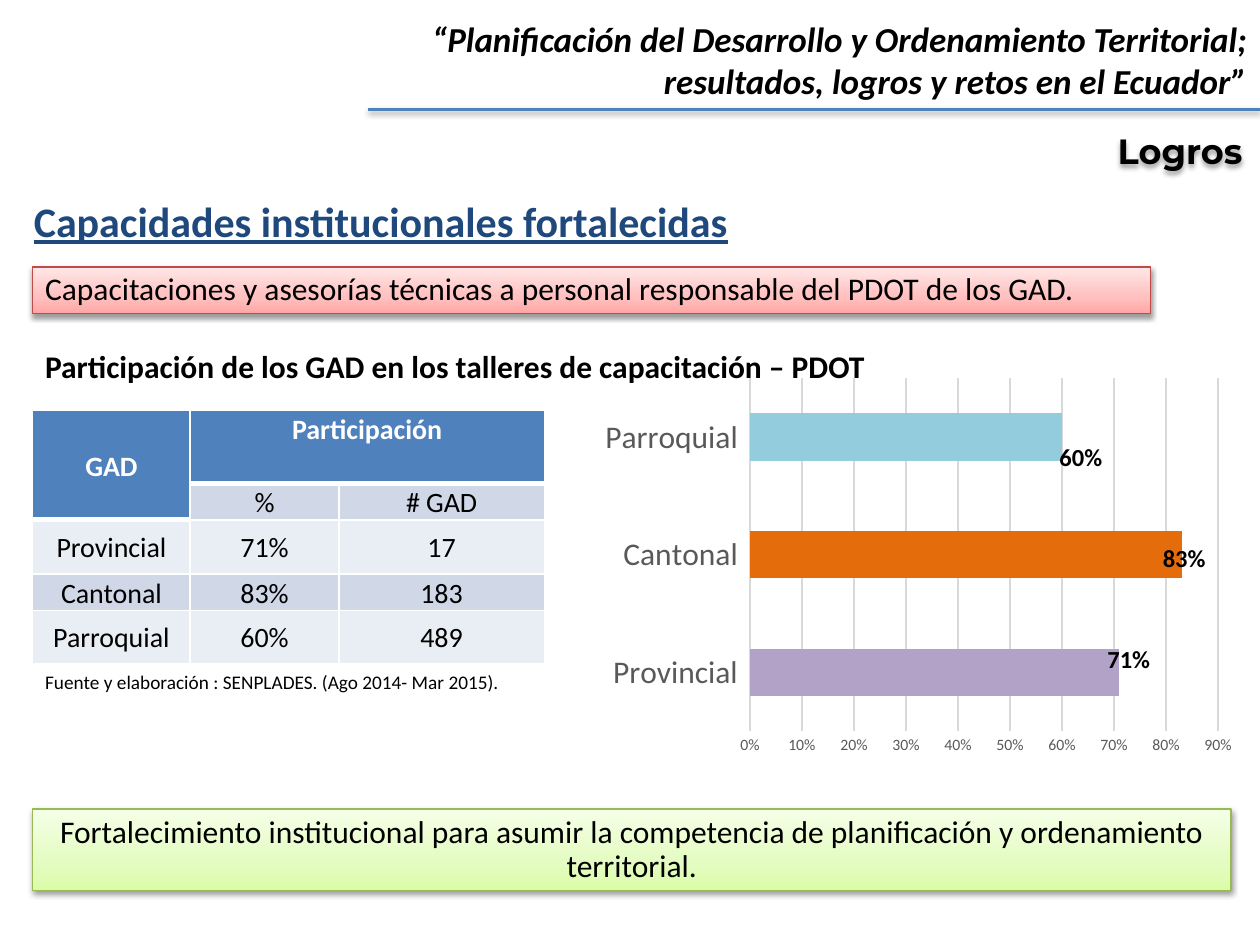
"""Builds the slide on training achievements in local planning."""
from copy import deepcopy

from lxml import etree
from pptx import Presentation
from pptx.chart.data import CategoryChartData
from pptx.dml.color import RGBColor
from pptx.enum.chart import XL_CHART_TYPE, XL_TICK_MARK
from pptx.enum.shapes import MSO_CONNECTOR, MSO_SHAPE
from pptx.enum.text import MSO_ANCHOR, MSO_AUTO_SIZE, PP_ALIGN
from pptx.oxml import parse_xml
from pptx.oxml.ns import nsdecls, qn
from pptx.util import Inches, Pt

LEFT, CENTER, RIGHT, JUSTIFY = PP_ALIGN.LEFT, PP_ALIGN.CENTER, PP_ALIGN.RIGHT, PP_ALIGN.JUSTIFY
TOP, MIDDLE = MSO_ANCHOR.TOP, MSO_ANCHOR.MIDDLE
FIT_SHAPE = MSO_AUTO_SIZE.SHAPE_TO_FIT_TEXT
RECTANGLE, ROUNDED = MSO_SHAPE.RECTANGLE, MSO_SHAPE.ROUNDED_RECTANGLE
STRAIGHT = MSO_CONNECTOR.STRAIGHT
BAR_CLUSTERED = XL_CHART_TYPE.BAR_CLUSTERED
NO_TICK = XL_TICK_MARK.NONE

BLACK = RGBColor(0x00, 0x00, 0x00)
WHITE = RGBColor(0xFF, 0xFF, 0xFF)
BLUE = RGBColor(0x4F, 0x81, 0xBD)
NAVY = RGBColor(0x1F, 0x49, 0x7D)
BAND_DARK = RGBColor(0xD0, 0xD8, 0xE8)
BAND_LIGHT = RGBColor(0xE9, 0xED, 0xF4)
AXIS_TEXT = RGBColor(0x59, 0x59, 0x59)
GRID = RGBColor(0xD9, 0xD9, 0xD9)
RED_LINE = RGBColor(0xBF, 0x4C, 0x48)
RED_STOPS = (RGBColor(0xFF, 0xA6, 0xA5), RGBColor(0xFF, 0xC0, 0xBF), RGBColor(0xFF, 0xE7, 0xE7))
GREEN_LINE = RGBColor(0x98, 0xB9, 0x55)
GREEN_STOPS = (RGBColor(0xDA, 0xFD, 0xA7), RGBColor(0xE4, 0xFC, 0xC2), RGBColor(0xF5, 0xFF, 0xE7))
BAR_COLORS = (RGBColor(0xB3, 0xA2, 0xC7), RGBColor(0xE4, 0x6C, 0x0A), RGBColor(0x93, 0xCD, 0xDD))

STOP_POSITIONS = (0, 0.35, 1)
COLUMN_WIDTHS = (1.25, 1.18, 1.63)
ROW_HEIGHTS = (0.58, 0.28, 0.43, 0.29, 0.42)
TABLE_ROWS = (
    ("GAD", "Participación", ""),
    ("", "%", "# GAD"),
    ("Provincial", "71%", "17"),
    ("Cantonal", "83%", "183"),
    ("Parroquial", "60%", "489"),
)
SHADOW = (
    f'<a:effectLst {nsdecls("a")}><a:outerShdw blurRad="40000" dist="20000" dir="5400000" '
    'rotWithShape="0"><a:srgbClr val="000000"><a:alpha val="38000"/></a:srgbClr>'
    '</a:outerShdw></a:effectLst>'
)


def style_font(font, size, color=BLACK, bold=False, name="Calibri"):
    """Set the typeface, size, colour and weight of a font."""
    font.name = name
    font.size = Pt(size)
    font.bold = bold
    font.color.rgb = color


def write_text(text_frame, text, size, alignment, spacing=None, **font_options):
    """Fill a text frame and format each of its paragraphs."""
    text_frame.text = text
    for paragraph in text_frame.paragraphs:
        paragraph.alignment = alignment
        if spacing:
            paragraph.line_spacing = spacing
        for run in paragraph.runs:
            style_font(run.font, size, **font_options)


def add_text(slide, box, text, size, alignment, spacing=None, wrap=True, **font_options):
    """Add a text box and return its text frame."""
    text_frame = slide.shapes.add_textbox(*map(Inches, box)).text_frame
    text_frame.word_wrap = wrap
    text_frame.auto_size = FIT_SHAPE
    write_text(text_frame, text, size, alignment, spacing, **font_options)
    return text_frame


def add_shadow(shape):
    """Give a shape or connector a soft shadow below it."""
    shape._element.spPr.append(parse_xml(SHADOW))


def add_banner(slide, box, text, alignment, stop_colors, line_color):
    """Add a shaded rectangle with a vertical three-stop gradient."""
    shape = slide.shapes.add_shape(RECTANGLE, *map(Inches, box))
    shape.fill.gradient()
    shape.fill.gradient_angle = 90
    stop_list = shape._element.spPr.find(".//" + qn("a:gsLst"))
    stop_list.insert(1, deepcopy(stop_list[0]))
    for stop, position, color in zip(shape.fill.gradient_stops, STOP_POSITIONS, stop_colors):
        stop.position = position
        stop.color.rgb = color
    shape.line.color.rgb = line_color
    shape.line.width = Pt(0.75)
    add_shadow(shape)
    shape.text_frame.word_wrap = True
    write_text(shape.text_frame, text, 18, alignment, 0.9)


def add_section_label(slide):
    """Add the section name at the top right."""
    shape = slide.shapes.add_shape(ROUNDED, *map(Inches, (8.31, 0.89, 2.19, 0.61)))
    shape.fill.background()
    shape.line.fill.background()
    add_shadow(shape)
    shape.text_frame.vertical_anchor = MIDDLE
    write_text(shape.text_frame, "Logros ", 20, CENTER, bold=True, name="Montserrat")


def add_header_rule(slide):
    """Add the line under the presentation title."""
    rule = slide.shapes.add_connector(STRAIGHT, *map(Inches, (2.92, 0.87, 10, 0.87)))
    rule.line.color.rgb = BLUE
    rule.line.width = Pt(2)
    add_shadow(rule)


def add_cell_borders(cell, bottom_width):
    """Draw white borders around a table cell."""
    properties = cell._tc.get_or_add_tcPr()
    for side, width in (("lnL", 1), ("lnR", 1), ("lnT", 1), ("lnB", bottom_width)):
        line = etree.SubElement(properties, qn(f"a:{side}"), w=str(Pt(width)))
        fill = etree.SubElement(line, qn("a:solidFill"))
        etree.SubElement(fill, qn("a:srgbClr"), val=str(WHITE))


def add_participation_table(slide):
    """Add the table of participation by level of government."""
    frame = slide.shapes.add_table(
        len(ROW_HEIGHTS), len(COLUMN_WIDTHS), *map(Inches, (0.26, 3.26, 4.06, 2)))
    table = frame.table
    for column, width in zip(table.columns, COLUMN_WIDTHS):
        column.width = Inches(width)
    for row, height in zip(table.rows, ROW_HEIGHTS):
        row.height = Inches(height)
    for i, values in enumerate(TABLE_ROWS):
        for j, value in enumerate(values):
            cell = table.cell(i, j)
            is_header = i == 0 or (i == 1 and j == 0)
            add_cell_borders(cell, 3 if is_header else 1)
            cell.fill.solid()
            cell.fill.fore_color.rgb = BLUE if is_header else (BAND_LIGHT, BAND_DARK)[i % 2]
            cell.margin_left = cell.margin_right = Inches(0.09)
            cell.margin_top = cell.margin_bottom = 0
            cell.vertical_anchor = TOP if i == 0 and j > 0 else MIDDLE
            write_text(cell.text_frame, value, 16, CENTER, 1.07,
                       color=WHITE if is_header else BLACK, bold=is_header)
    table.cell(0, 0).merge(table.cell(1, 0))
    table.cell(0, 1).merge(table.cell(0, 2))


def add_participation_chart(slide):
    """Add the bar chart of participation with its value labels."""
    data = CategoryChartData(number_format="0%")
    data.categories = ["Provincial ", "Cantonal ", "Parroquial "]
    data.add_series("Series 1", (0.71, 0.83, 0.6))
    chart = slide.shapes.add_chart(
        BAR_CLUSTERED, *map(Inches, (4.7, 2.94, 5.18, 3.11)), data).chart
    chart.has_legend = chart.has_title = False
    style_font(chart.font, 10)
    plot = chart.plots[0]
    plot.gap_width = 150
    plot.vary_by_categories = False
    for i, color in enumerate(BAR_COLORS):
        fill = plot.series[0].points[i].format.fill
        fill.solid()
        fill.fore_color.rgb = color
    for axis, size in ((chart.category_axis, 18), (chart.value_axis, 9)):
        axis.major_tick_mark = axis.minor_tick_mark = NO_TICK
        style_font(axis.tick_labels.font, size, AXIS_TEXT)
    chart.category_axis.format.line.color.rgb = GRID
    chart.category_axis.format.line.width = Pt(1)
    value_axis = chart.value_axis
    value_axis.minimum_scale, value_axis.maximum_scale, value_axis.major_unit = 0, 0.9, 0.1
    value_axis.tick_labels.number_format = "0%"
    value_axis.tick_labels.number_format_is_linked = False
    value_axis.format.line.fill.background()
    value_axis.major_gridlines.format.line.color.rgb = GRID
    value_axis.major_gridlines.format.line.width = Pt(0.75)
    for i, (left, label) in enumerate(((8.31, "60%"), (9.13, "83%"), (8.69, "71%"))):
        add_text(slide, (left, 3.46 + 0.8 * i, 0.55, 0.34), label, 14, LEFT, wrap=False, bold=True)


def main():
    """Build and save the presentation."""
    presentation = Presentation()
    presentation.slide_width, presentation.slide_height = Inches(10), Inches(7.5)
    slide = presentation.slides.add_slide(presentation.slide_layouts[6])
    add_section_label(slide)
    add_header_rule(slide)
    title = add_text(slide, (1.68, 0.09, 8.32, 0.77),
                     "“Planificación del Desarrollo y Ordenamiento Territorial;\n"
                     "resultados, logros y retos en el Ecuador”", 20, RIGHT, bold=True)
    for paragraph in title.paragraphs:
        paragraph.runs[0].font.italic = True
    add_banner(slide, (0.26, 2.12, 8.87, 0.37),
               "Capacitaciones y asesorías técnicas a personal responsable del PDOT de los GAD. ",
               JUSTIFY, RED_STOPS, RED_LINE)
    heading = add_text(slide, (0.17, 1.55, 6.44, 0.46), "Capacidades institucionales fortalecidas",
                       24, JUSTIFY, 0.9, color=NAVY, bold=True)
    heading.paragraphs[0].runs[0].font.underline = True
    add_participation_table(slide)
    add_participation_chart(slide)
    add_text(slide, (0.26, 2.74, 8, 0.37),
             "Participación de los GAD en los talleres de capacitación – PDOT",
             18, JUSTIFY, 0.9, bold=True)
    add_text(slide, (0.26, 5.29, 4.06, 0.27),
             "Fuente y elaboración : SENPLADES. (Ago 2014- Mar 2015). ", 11, JUSTIFY, 0.9)
    add_banner(slide, (0.26, 6.42, 9.51, 0.65),
               "Fortalecimiento institucional para asumir la competencia de planificación "
               "y ordenamiento territorial.", CENTER, GREEN_STOPS, GREEN_LINE)
    presentation.save("out.pptx")


if __name__ == "__main__":
    main()
